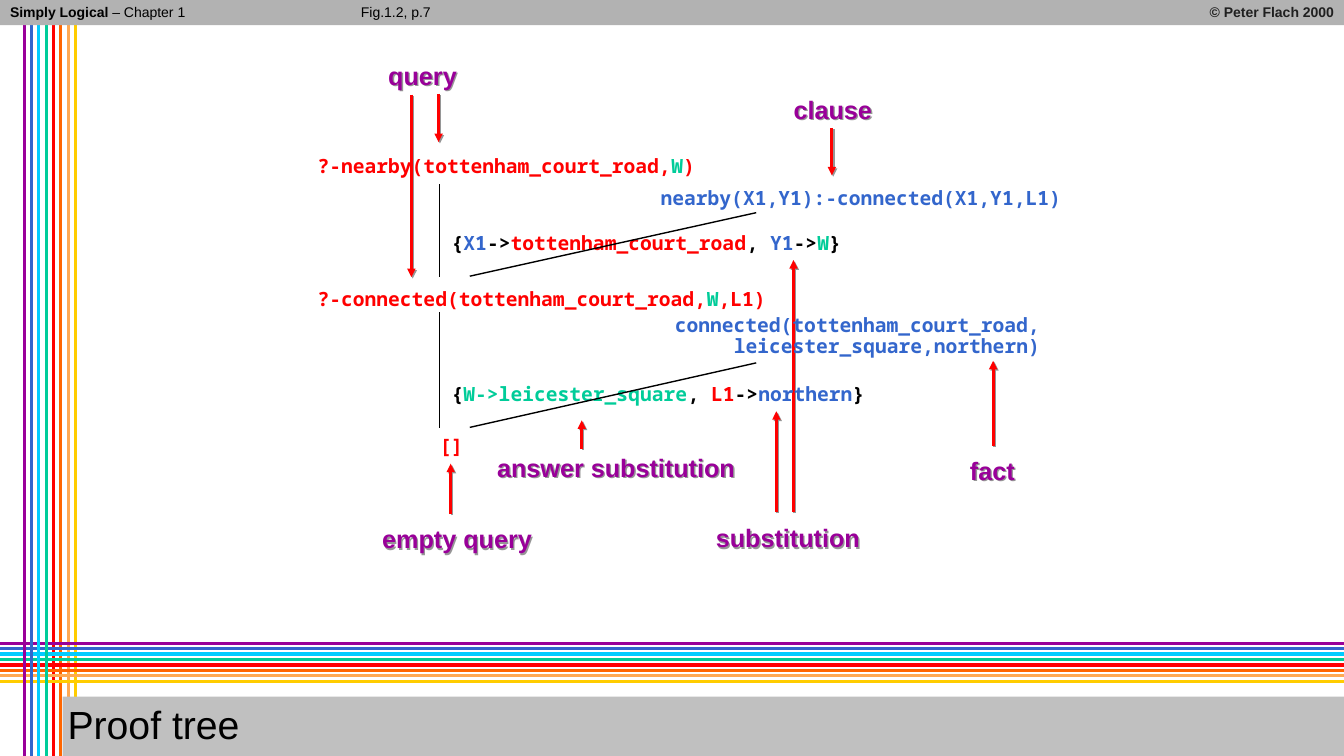
"""Build the proof tree slide with its labelled arrows."""
from lxml.etree import SubElement
from pptx import Presentation
from pptx.dml.color import RGBColor
from pptx.enum.shapes import MSO_CONNECTOR, MSO_SHAPE
from pptx.enum.text import MSO_ANCHOR, MSO_AUTO_SIZE, PP_ALIGN
from pptx.oxml.ns import qn
from pptx.util import Inches, Pt

WIDE, HIGH = 13.33, 7.5
BLACK, DARK, PURPLE = "000000", "202020", "990099"
RED, BLUE, GREEN = "FF0000", "3366CC", "00CC99"
STRIPES = [PURPLE, BLUE, "00CCFF", GREEN, RED, "FF6600", "FFA953", "FFCC00"]
LEFT, RIGHT = PP_ALIGN.LEFT, PP_ALIGN.RIGHT

TITLE = "Proof tree"
HEADS = [
    ((0.05, 0, 2.56, 0.27), LEFT, [("Simply Logical", BLACK, True), (" – Chapter 1", BLACK, False)]),
    ((9.78, 0, 3.5, 0.27), RIGHT, [("© Peter Flach 2000", DARK, True)]),
    ((3.53, 0, 0.81, 0.26), LEFT, [("Fig.1.2, p.7", BLACK, False)]),
]
LABELS = [
    ("clause", 7.82, 0.92, 0.89),
    ("fact", 9.57, 4.5, 0.56),
    ("empty query", 3.74, 5.18, 1.6),
    ("answer substitution", 4.88, 4.47, 2.47),
    ("substitution", 7.05, 5.17, 1.54),
    ("query", 3.8, 0.58, 0.79),
]
ARROWS = [
    (8.25, 1.27, 1.74),
    (9.85, 4.42, 3.58),
    (4.47, 5.1, 4.6),
    (5.77, 4.45, 4.17),
    (7.7, 5.08, 4.08),
    (7.87, 5.08, 2.58),
    (4.35, 0.93, 1.41),
    (4.08, 0.94, 2.75),
]
CODE = [
    ((3.1, 1.5, 3.9, 0.33), LEFT,
     [("?-nearby(tottenham_court_road,", RED), ("W", GREEN), (")", RED)]),
    ((6.5, 1.82, 4.08, 0.33), RIGHT, [("nearby(X1,Y1):-connected(X1,Y1,L1)", BLUE)]),
    ((4.43, 2.27, 4.2, 0.33), LEFT,
     [("{", BLACK), ("X1", BLUE), ("->", BLACK), ("tottenham_court_road", RED), (", ", BLACK),
      ("Y1", BLUE), ("->", BLACK), ("W", GREEN), ("}", BLACK)]),
    ((3.1, 2.82, 4.6, 0.33), LEFT,
     [("?-connected(tottenham_court_road,", RED), ("W", GREEN), (",L1)", RED)]),
    ((6.53, 3.08, 3.84, 0.55), RIGHT,
     [("connected(tottenham_court_road,", BLUE), ("\n", BLUE), ("leicester_square,northern)", BLUE)]),
    ((4.43, 3.77, 4.3, 0.33), LEFT,
     [("{", BLACK), ("W->leicester_square", GREEN), (", ", BLACK), ("L1", RED), ("->", BLACK),
      ("northern", BLUE), ("}", BLACK)]),
    ((4.31, 4.28, 0.36, 0.33), LEFT, [("[]", RED)]),
]
BRANCHES = [
    (4.36, 1.83, 4.36, 2.75),
    (4.66, 2.74, 7.5, 2.11),
    (4.36, 3.1, 4.36, 4.25),
    (4.66, 4.24, 7.5, 3.6),
]


def paint(target, color):
    """Set a solid fill from a hex string."""
    target.solid()
    target.fore_color.rgb = RGBColor.from_string(color)


def shade(props):
    """Give a shape the grey offset shadow."""
    effects = SubElement(props, qn("a:effectLst"))
    cast = SubElement(effects, qn("a:outerShdw"), blurRad="0", dist="17780", dir="2700000", algn="ctr")
    SubElement(cast, qn("a:srgbClr"), val="969696")


def rule(shapes, ends, color, width, arrow=False):
    """Draw a straight line, or a shadowed arrow."""
    line = shapes.add_connector(MSO_CONNECTOR.STRAIGHT, *map(Inches, ends))
    line.line.width = Pt(width)
    paint(line.line.fill, color)
    props = line._element.spPr
    if arrow:
        SubElement(props.find(qn("a:ln")), qn("a:tailEnd"), type="triangle")
        shade(props)
    else:
        SubElement(props, qn("a:effectLst"))


def setup(frame, wrap, fit):
    """Set wrapping, fitting and margins of a text frame."""
    frame.word_wrap = wrap
    frame.auto_size = fit
    frame.margin_left = frame.margin_right = Inches(0.05)
    frame.margin_top = frame.margin_bottom = Inches(0.05)


def style(para, face, size, color, bold, align):
    """Format a whole paragraph."""
    para.alignment = align
    para.line_spacing = 0.9
    para.font.name, para.font.size, para.font.bold = face, Pt(size), bold
    paint(para.font.fill, color)


def write(shapes, place, parts, face, size, align=LEFT, wrap=False):
    """Add and return a text box of (text, colour, bold) parts."""
    box = shapes.add_textbox(*map(Inches, place))
    setup(box.text_frame, wrap, MSO_AUTO_SIZE.SHAPE_TO_FIT_TEXT)
    para = box.text_frame.paragraphs[0]
    first, heavy = parts[0][1:]
    style(para, face, size, first, heavy, align)
    for text, color, bold in parts:
        if text == "\n":
            para.add_line_break()
            continue
        run = para.add_run()
        run.text = text
        if color != first:
            paint(run.font.fill, color)
        if bold != heavy:
            run.font.bold = bold
    return box


def weave(shapes):
    """Draw the crossing stripes, the top bar and the title bar."""
    posts, beams = [], []
    for i, color in enumerate(STRIPES):
        x, y = 0.24 + 0.51 * i / 7, 6.38 + 0.38 * i / 7
        posts.append(((x, 0, x, HIGH), color))
        beams.append(((WIDE, y, 0, y), color))
    for ends, color in posts[4:] + beams + posts[:4]:
        rule(shapes, ends, color, 2.25)

    bar = shapes.add_shape(MSO_SHAPE.RECTANGLE, 0, 0, Inches(WIDE), Inches(0.25))
    bar.shadow.inherit = False
    paint(bar.fill, "B2B2B2")
    bar.line.fill.background()

    title = shapes.title
    title.left, title.top, title.width, title.height = map(Inches, (0.62, 6.91, 12.72, 0.6))
    paint(title.fill, "C0C0C0")
    title.text_frame.text = TITLE
    setup(title.text_frame, True, MSO_AUTO_SIZE.NONE)
    title.text_frame.vertical_anchor = MSO_ANCHOR.MIDDLE
    style(title.text_frame.paragraphs[0], "Arial", 28, BLACK, False, LEFT)
    shapes._spTree.append(title._element)


def main():
    """Build and save the slide."""
    deck = Presentation()
    deck.slide_width, deck.slide_height = Inches(WIDE), Inches(HIGH)
    shapes = deck.slides.add_slide(deck.slide_layouts[5]).shapes
    weave(shapes)
    for place, align, parts in HEADS:
        write(shapes, place, parts, "Arial", 10, align, wrap=place[2] > 1)
    for text, left, top, width in LABELS:
        label = write(shapes, (left, top, width, 0.4), [(text, PURPLE, True)], "Arial", 18)
        shade(label._element.spPr)
    for x, start, end in ARROWS:
        rule(shapes, (x, start, x, end), RED, 2, arrow=True)
    for place, align, parts in CODE:
        bold = [(text, color, True) for text, color in parts]
        write(shapes, place, bold, "Noto Sans Mono", 14, align)
    for ends in BRANCHES:
        rule(shapes, ends, BLACK, 1)
    deck.save("out.pptx")


if __name__ == "__main__":
    main()
